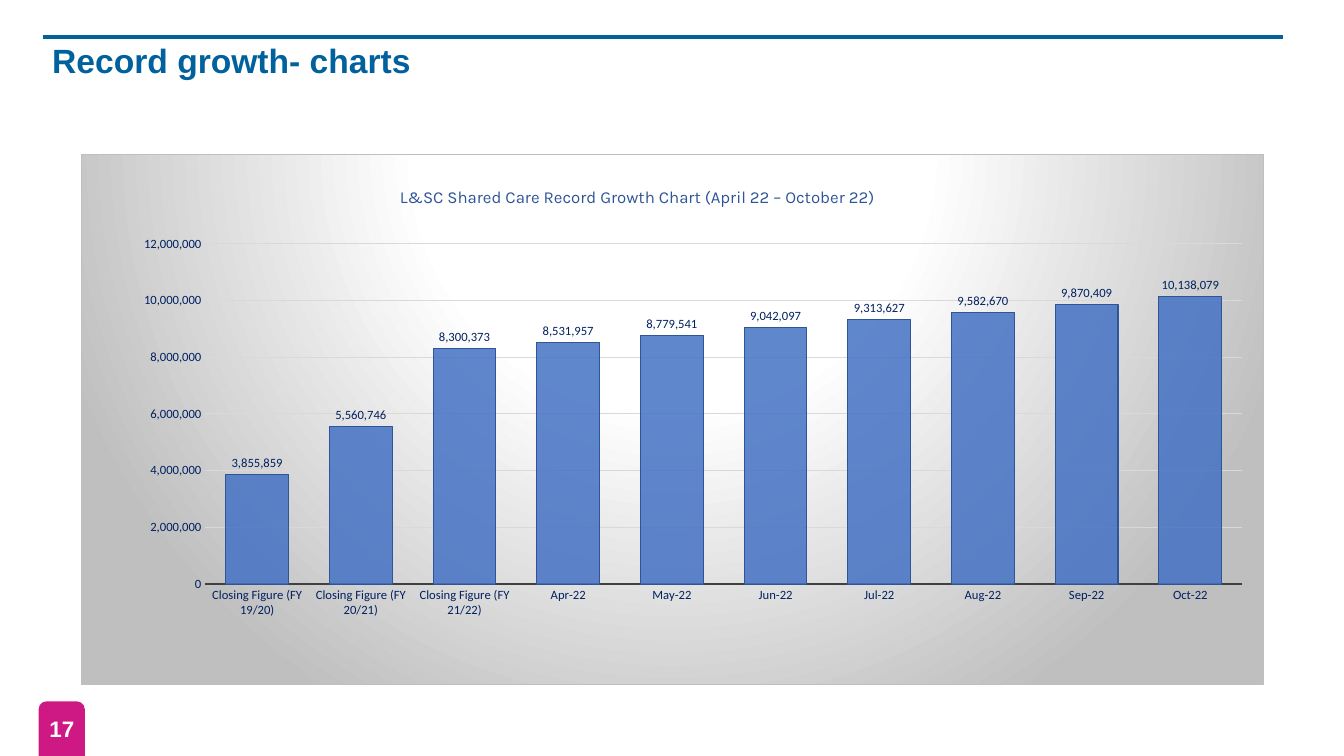
from dataclasses import dataclass

from lxml import etree
from pptx import Presentation
from pptx.chart.data import CategoryChartData
from pptx.dml.color import RGBColor
from pptx.enum.chart import XL_CHART_TYPE, XL_LABEL_POSITION, XL_TICK_MARK
from pptx.enum.shapes import MSO_CONNECTOR, MSO_SHAPE
from pptx.enum.text import MSO_ANCHOR, PP_ALIGN
from pptx.oxml import parse_xml
from pptx.oxml.ns import nsdecls, qn
from pptx.util import Pt

COLUMNS = XL_CHART_TYPE.COLUMN_CLUSTERED
OUTSIDE = XL_LABEL_POSITION.OUTSIDE_END
NO_TICK = XL_TICK_MARK.NONE
STRAIGHT = MSO_CONNECTOR.STRAIGHT
TAB_SHAPE = MSO_SHAPE.ROUND_2_SAME_RECTANGLE
MIDDLE = MSO_ANCHOR.MIDDLE
LEFT, CENTER = PP_ALIGN.LEFT, PP_ALIGN.CENTER

TEAL, MAGENTA, WHITE = "00619D", "CE1884", "FFFFFF"
NAVY, BAR_BLUE, EDGE_BLUE = "002060", "4472C4", "2F5597"
AXIS_GREY, GRID_GREY, FRAME_GREY = "404040", "D9D9D9", "BFBFBF"

CHART_TITLE = "L&SC Shared Care Record Growth Chart (April 22 – October 22)"


@dataclass(frozen=True)
class Area:
    left: float
    top: float
    width: float
    height: float

    def points(self) -> tuple:
        return Pt(self.left), Pt(self.top), Pt(self.width), Pt(self.height)


@dataclass(frozen=True)
class Reading:
    period: str
    records: int


READINGS = [
    Reading("Closing Figure (FY 19/20)", 3855859),
    Reading("Closing Figure (FY 20/21)", 5560746),
    Reading("Closing Figure (FY 21/22)", 8300373),
    Reading("Apr-22", 8531957),
    Reading("May-22", 8779541),
    Reading("Jun-22", 9042097),
    Reading("Jul-22", 9313627),
    Reading("Aug-22", 9582670),
    Reading("Sep-22", 9870409),
    Reading("Oct-22", 10138079),
]


def color(value: str) -> RGBColor:
    return RGBColor.from_string(value)


def style_font(font, name: str, size: float, ink: str, bold: bool = False) -> None:
    font.name = name
    font.size = Pt(size)
    font.bold = bold
    font.color.rgb = color(ink)


def style_line(line, ink: str, width: float) -> None:
    line.color.rgb = color(ink)
    line.width = Pt(width)


def add_text(page, area: Area, text: str, *, size: float, ink: str,
             align=LEFT, inset: float = 0, spacing: float = 1) -> None:
    frame = page.shapes.add_textbox(*area.points()).text_frame
    frame.word_wrap = True
    frame.vertical_anchor = MIDDLE
    frame.margin_left = frame.margin_right = Pt(inset)
    frame.margin_top = frame.margin_bottom = Pt(inset / 2)
    para = frame.paragraphs[0]
    para.alignment = align
    para.line_spacing = spacing
    span = para.add_run()
    span.text = text
    style_font(span.font, "Arial", size, ink, bold=True)


def add_rule(page) -> None:
    rule = page.shapes.add_connector(STRAIGHT, Pt(31), Pt(26.6), Pt(916.6), Pt(26.6))
    style_line(rule.line, TEAL, 3)
    etree.SubElement(rule._element.spPr, qn("a:effectLst"))


def add_number_tab(page) -> None:
    tab = page.shapes.add_shape(TAB_SHAPE, *Area(27.6, 501, 33, 39).points())
    tab.shadow.inherit = False
    tab.adjustments[0] = 0.17
    tab.fill.solid()
    tab.fill.fore_color.rgb = color(MAGENTA)
    tab.line.fill.background()


def set_layout(parent, index: int, **values) -> None:
    for previous in parent.findall(qn("c:layout")):
        parent.remove(previous)
    parts = "".join(f'<c:{key} val="{value}"/>' for key, value in values.items())
    parent.insert(index, parse_xml(
        f'<c:layout {nsdecls("c")}><c:manualLayout>{parts}</c:manualLayout></c:layout>'))


def fill_chart_frame(chart) -> None:
    stops = "".join(
        f'<a:gs pos="{percent * 1000}"><a:srgbClr val="{ink}"/></a:gs>'
        for percent, ink in ((0, WHITE), (39, WHITE), (100, FRAME_GREY)))
    frame = parse_xml(
        f'<c:spPr {nsdecls("c", "a")}><a:gradFill><a:gsLst>{stops}</a:gsLst>'
        '<a:path path="circle"><a:fillToRect l="50000" t="-80000" r="50000" b="180000"/>'
        f'</a:path></a:gradFill><a:ln w="{Pt(0.75)}"><a:solidFill>'
        f'<a:srgbClr val="{FRAME_GREY}"/></a:solidFill></a:ln></c:spPr>')
    chart._chartSpace.find(qn("c:chart")).addnext(frame)


def style_axes(chart) -> None:
    for axis in (chart.category_axis, chart.value_axis):
        axis.major_tick_mark = axis.minor_tick_mark = NO_TICK
        style_font(axis.tick_labels.font, "Calibri", 9, NAVY)
    style_line(chart.category_axis.format.line, AXIS_GREY, 1.5)
    values = chart.value_axis
    values.minimum_scale, values.maximum_scale = 0, 12000000
    values.major_unit = 2000000
    values.format.line.fill.background()
    values.tick_labels.number_format = "#,##0"
    values.tick_labels.number_format_is_linked = False
    style_line(values.major_gridlines.format.line, GRID_GREY, 0.75)


def style_bars(chart) -> None:
    plot = chart.plots[0]
    plot.gap_width = 65
    plot.vary_by_categories = False
    bars = plot.series[0]
    bars.format.fill.solid()
    bars.format.fill.fore_color.rgb = color(BAR_BLUE)
    ink = bars._element.spPr.find(".//" + qn("a:srgbClr"))
    etree.SubElement(ink, qn("a:alpha")).set("val", "85000")
    style_line(bars.format.line, EDGE_BLUE, 0.75)
    labels = bars.data_labels
    labels.show_value = True
    labels.position = OUTSIDE
    labels.number_format = "#,##0"
    labels.number_format_is_linked = False
    style_font(labels.font, "Calibri", 9, NAVY)


def add_growth_chart(page) -> None:
    data = CategoryChartData(number_format="#,##0")
    data.categories = [reading.period for reading in READINGS]
    data.add_series("Series 1", [reading.records for reading in READINGS])
    area = Area(57.6, 109.8, 845.3, 379.4)
    chart = page.shapes.add_chart(COLUMNS, *area.points(), data).chart
    style_font(chart.font, "Calibri", 10, "000000")
    chart.has_legend = False
    chart.has_title = True
    para = chart.chart_title.text_frame.paragraphs[0]
    span = para.add_run()
    span.text = CHART_TITLE
    style_font(span.font, "Karla", 12, EDGE_BLUE)
    set_layout(chart.chart_title._element, 1,
               xMode="edge", yMode="edge", x=0.267, y=0.053)
    set_layout(chart._chartSpace.find(".//" + qn("c:plotArea")), 0,
               layoutTarget="inner", xMode="edge", yMode="edge",
               x=0.105, y=0.169, w=0.877, h=0.642)
    style_axes(chart)
    style_bars(chart)
    fill_chart_frame(chart)


def main() -> None:
    deck = Presentation()
    deck.slide_width, deck.slide_height = Pt(960), Pt(540)
    page = deck.slides.add_slide(deck.slide_layouts[6])
    add_rule(page)
    add_number_tab(page)
    add_text(page, Area(30.2, 32.4, 735.8, 25.2), "Record growth- charts",
             size=24, ink=TEAL, inset=7.2, spacing=0.9)
    add_text(page, Area(30.2, 509.8, 28, 21.6), "17",
             size=16, ink=WHITE, align=CENTER)
    add_growth_chart(page)
    deck.save("out.pptx")


if __name__ == "__main__":
    main()
